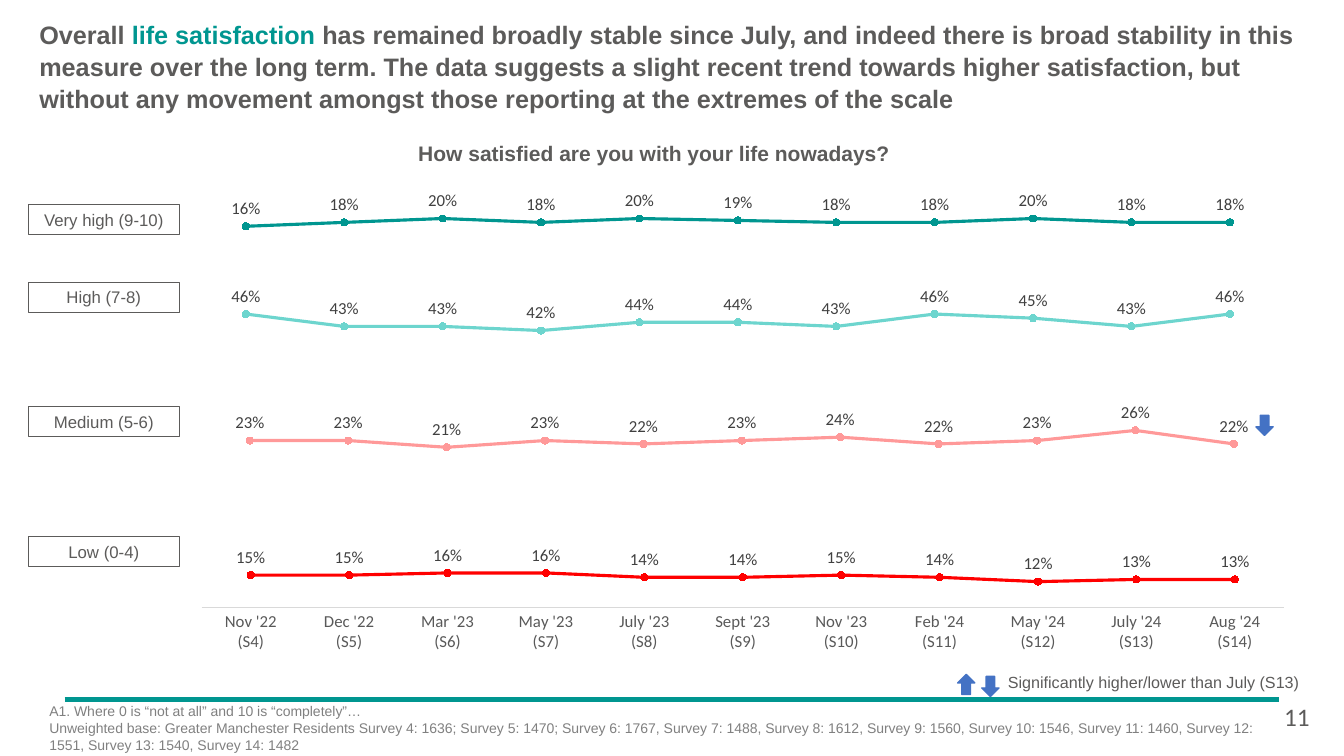
from lxml.etree import SubElement
from pptx import Presentation
from pptx.chart.data import CategoryChartData as ChartData
from pptx.dml.color import RGBColor
from pptx.enum.chart import XL_CHART_TYPE as ChartType, XL_LABEL_POSITION as LabelPosition
from pptx.enum.chart import XL_MARKER_STYLE as Marker, XL_TICK_MARK as Tick
from pptx.enum.shapes import MSO_CONNECTOR as Connector, MSO_SHAPE as Shape
from pptx.enum.text import MSO_ANCHOR as Anchor, PP_ALIGN as Align
from pptx.oxml import parse_xml
from pptx.oxml.ns import nsdecls, qn
from pptx.util import Inches, Pt

deck = Presentation()
deck.slide_width, deck.slide_height = Inches(13.33), Inches(7.5)
page = deck.slides.add_slide(deck.slide_layouts[6])
color = RGBColor.from_string
GREY, TEAL, BLUE = "5C5B5A", "009690", "4472C4"


def place(left, top, width, height):
    column, row = deck.slide_width / 100, deck.slide_height / 100
    return int(left * column), int(top * row), int(width * column), int(height * row)


def write(box, text, size=12, ink=GREY, font="Arial", bold=False, accent="",
          align=Align.LEFT, anchor=Anchor.TOP, wrap=True, inset=None, spacing=None):
    frame = box.text_frame
    frame.word_wrap, frame.vertical_anchor = wrap, anchor
    if inset is not None:
        frame.margin_left = frame.margin_right = frame.margin_top = frame.margin_bottom = inset
    for index, line in enumerate(text.split("\n")):
        para = frame.add_paragraph() if index else frame.paragraphs[0]
        para.alignment, para.line_spacing = align, spacing
        for part in line.partition(accent) if accent else [line]:
            span = para.add_run()
            span.text = part
            span.font.size, span.font.name, span.font.bold = Pt(size), font, bold
            span.font.color.rgb = color(TEAL if accent and part == accent else ink)


left, top, width, height = place(4.8, 92.53, 90.38, 0)
rule = page.shapes.add_connector(Connector.STRAIGHT, left, top, left + width, top)
rule.line.color.rgb = color(TEAL)
rule.line.width = Pt(3)
SubElement(rule._element.spPr, qn("a:effectLst"))

write(page.shapes.add_textbox(*place(2.93, 2.4, 94.2, 12.13)),
      "Overall life satisfaction has remained broadly stable since July, and indeed there is "
      "broad stability in this measure over the long term. The data suggests a slight recent "
      "trend towards higher satisfaction, but without any movement amongst those reporting at "
      "the extremes of the scale",
      size=18, bold=True, accent="life satisfaction", inset=0, spacing=1.05)
write(page.shapes.add_textbox(*place(30.38, 17.87, 36.9, 4.67)),
      "How satisfied are you with your life nowadays?", size=15, bold=True, wrap=False)

waves = ["Nov '22\n(S4)", "Dec '22\n(S5)", "Mar '23\n(S6)", "May '23\n(S7)", "July '23\n(S8)",
         "Sept '23\n(S9)", "Nov '23\n(S10)", "Feb '24\n(S11)", "May '24\n(S12)",
         "July '24\n(S13)", "Aug '24\n(S14)"]
numbers = [str(index + 1) for index in range(len(waves))]
bands = [
    ("Very high (9-10)", 27.07, TEAL, (13.88, 19.07, 82.95, 27.2), (0.078, 0.473), 0,
     [16, 18, 20, 18, 20, 19, 18, 18, 20, 18, 18]),
    ("Low (0-4)", 70.93, "FF0000", (14.25, 61.07, 82.95, 35.07), (0.141, 0.41), 0,
     [15, 15, 16, 16, 14, 14, 15, 14, 12, 13, 13]),
    ("Medium (5-6)", 53.73, "FF9999", (14.18, 44.8, 82.95, 39.47), (0.036, 0.566), 0,
     [23, 23, 21, 23, 22, 23, 24, 22, 23, 26, 22]),
    ("High (7-8)", 37.33, "6DD5CE", (13.88, 30.93, 82.95, 27.2), (0.31, 0.241), 0.38,
     [46, 43, 43, 42, 44, 44, 43, 46, 45, 43, 46]),
]
for name, label_top, ink, area, (plot_top, plot_height), low, percents in bands:
    shows_waves = name == "Low (0-4)"
    data = ChartData(number_format="0%")
    data.categories = waves if shows_waves else numbers
    data.add_series(name, [percent / 100 for percent in percents])
    chart = page.shapes.add_chart(ChartType.LINE_MARKERS_STACKED, *place(*area), data).chart
    chart.has_legend = chart.has_title = False
    chart.font.size, chart.font.name = Pt(10), "Calibri"
    chart.font.color.rgb = color("000000")

    values, dates = chart.value_axis, chart.category_axis
    values.minimum_scale, values.maximum_scale = low, 0.5
    values.has_major_gridlines = values.visible = False
    dates.visible = shows_waves
    if shows_waves:
        dates.major_tick_mark = dates.minor_tick_mark = Tick.NONE
        dates.format.line.color.rgb = color("D9D9D9")
        dates.format.line.width = Pt(0.75)
        dates.tick_labels.font.size, dates.tick_labels.font.name = Pt(12), "Calibri"
        dates.tick_labels.font.color.rgb = color("595959")

    chart.plots[0].vary_by_categories = False
    series = chart.plots[0].series[0]
    series.smooth = False
    series.format.line.color.rgb = color(ink)
    series.format.line.width = Pt(2.25)
    series.marker.style, series.marker.size = Marker.CIRCLE, 5
    series.marker.format.fill.solid()
    series.marker.format.fill.fore_color.rgb = color(ink)
    series.marker.format.line.color.rgb = color(ink)
    labels = series.data_labels
    labels.show_value, labels.position = True, LabelPosition.ABOVE
    labels.number_format, labels.number_format_is_linked = "0%", False
    labels.font.size, labels.font.name = Pt(12), "Calibri"
    labels.font.color.rgb = color("404040")

    plot_area = chart._chartSpace.chart.plotArea
    for layout in plot_area.findall(qn("c:layout")):
        plot_area.remove(layout)
    plot_area.insert(0, parse_xml(
        f'<c:layout {nsdecls("c")}><c:manualLayout><c:layoutTarget val="inner"/>'
        f'<c:xMode val="edge"/><c:yMode val="edge"/><c:x val="0.009"/><c:y val="{plot_top}"/>'
        f'<c:w val="0.971"/><c:h val="{plot_height}"/></c:manualLayout></c:layout>'))
    clear = f'<c:spPr {nsdecls("c", "a")}><a:noFill/><a:ln><a:noFill/></a:ln></c:spPr>'
    plot_area.append(parse_xml(clear))
    chart._chartSpace.chart.addnext(parse_xml(clear))

    label = page.shapes.add_shape(Shape.RECTANGLE, *place(2.1, label_top, 11.25, 4))
    label.shadow.inherit = False
    label.fill.background()
    label.line.color.rgb = color(GREY)
    label.line.width = Pt(0.75)
    write(label, name, align=Align.CENTER, anchor=Anchor.MIDDLE)

for left, top, turn in [(71.25, 89.2, 180), (73.05, 89.47, 0), (93.45, 54.93, 0)]:
    arrow = page.shapes.add_shape(Shape.DOWN_ARROW, *place(left, top, 1.28, 2.67))
    arrow.rotation = turn
    arrow.shadow.inherit = False
    arrow.fill.solid()
    arrow.fill.fore_color.rgb = color(BLUE)
    arrow.line.color.rgb = color(BLUE)
    arrow.line.width = Pt(1)

write(page.shapes.add_textbox(*place(74.25, 88.27, 23.33, 3.87)),
      "Significantly higher/lower than July (S13)", size=11.5, wrap=False)
write(page.shapes.add_textbox(*place(2.93, 92.27, 93.08, 7.73)),
      "A1. Where 0 is “not at all” and 10 is “completely”…\n"
      "Unweighted base: Greater Manchester Residents Survey 4: 1636; Survey 5: 1470; "
      "Survey 6: 1767, Survey 7: 1488, Survey 8: 1612, Survey 9: 1560, Survey 10: 1546, "
      "Survey 11: 1460, Survey 12: 1551, Survey 13: 1540, Survey 14: 1482",
      size=10, ink="808080")
write(page.shapes.add_textbox(*place(94.8, 92.13, 3.98, 5.33)), "11",
      size=18, font="Calibri", anchor=Anchor.MIDDLE)

deck.save("out.pptx")
